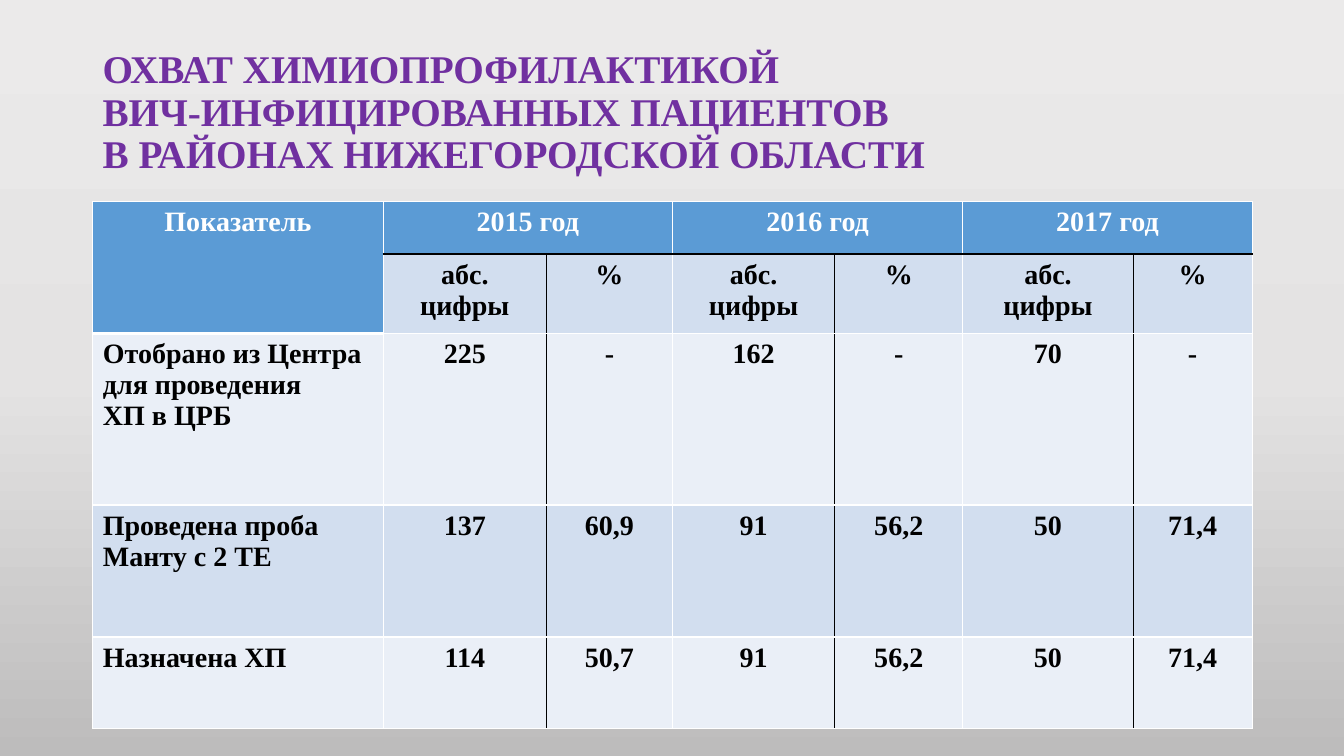
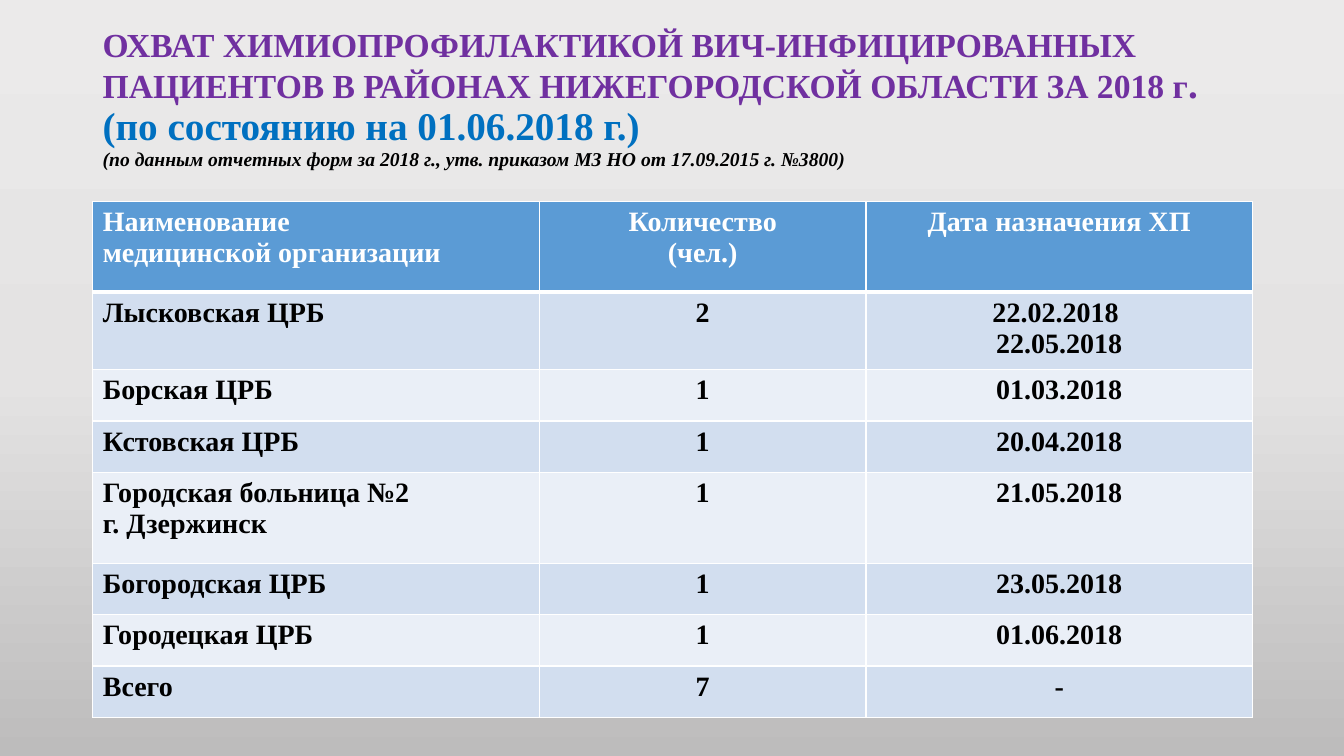
from lxml.etree import SubElement
from pptx import Presentation
from pptx.dml.color import RGBColor
from pptx.enum.text import MSO_ANCHOR, PP_ALIGN
from pptx.oxml.ns import qn
from pptx.util import Inches, Pt

# Shared look
FONT = "Times New Roman"
PURPLE, BLUE, BLACK, WHITE = "7030A0", "0070C0", "000000", "FFFFFF"
HEADER_FILL, DARK_BAND, LIGHT_BAND = "5B9BD5", "D2DEEF", "EAEFF7"
BACKGROUND_STOPS = [(0, "EBEAEA"), (50, "E4E3E3"), (100, "BDBCBC")]
LEFT, WIDTH = 0.92, 11.5
TABLE_TOP, TITLE_BOTTOM = 2, 1.85
TABLE_SIZE = 20


def rgb(color):
    return RGBColor.from_string(color)


def add_run(paragraph, text, size, color, italic=False):
    run = paragraph.add_run()
    run.text = text
    font = run.font
    font.name, font.size, font.bold, font.italic = FONT, Pt(size), True, italic
    font.color.rgb = rgb(color)


def set_background(master):
    """Vertical gradient inherited by every slide."""
    fill = master.background.fill
    fill.gradient()
    fill.gradient_angle = 270
    stop_list = next(master.element.iter(qn("a:gsLst")))
    for stop in list(stop_list):
        stop_list.remove(stop)
    for position, color in BACKGROUND_STOPS:
        stop = SubElement(stop_list, qn("a:gs"), pos=str(position * 1000))
        SubElement(stop, qn("a:srgbClr"), val=color)


def add_title(slide, top, lines):
    """Each line is a list of (text, size, color[, italic]) runs."""
    box = slide.shapes.add_textbox(Inches(LEFT), Inches(top), Inches(WIDTH),
                                   Inches(TITLE_BOTTOM - top))
    frame = box.text_frame
    frame.word_wrap = True
    frame.vertical_anchor = MSO_ANCHOR.MIDDLE
    paragraph = frame.paragraphs[0]
    paragraph.line_spacing = 0.9
    for index, line in enumerate(lines):
        if index:
            paragraph.add_line_break()
        for run in line:
            add_run(paragraph, *run)


def set_borders(cell, special):
    """White 1 pt borders, except the sides given in special."""
    properties = cell._tc.get_or_add_tcPr()
    for side in "LRTB":
        color, width = special.get(side, (WHITE, 1))
        line = SubElement(properties, qn(f"a:ln{side}"), w=str(Pt(width)))
        fill = SubElement(line, qn("a:solidFill"))
        SubElement(fill, qn("a:srgbClr"), val=color)


def fill_cell(cell, text, color, text_color, alignment):
    cell.fill.solid()
    cell.fill.fore_color.rgb = rgb(color)
    if not text:
        return
    frame = cell.text_frame
    for index, line in enumerate(text.split("\n")):
        paragraph = frame.add_paragraph() if index else frame.paragraphs[0]
        paragraph.alignment = alignment
        add_run(paragraph, line, TABLE_SIZE, text_color)


def add_table(slide, widths, heights, rows, special_borders, is_header):
    frame = slide.shapes.add_table(len(rows), len(widths), Inches(LEFT), Inches(TABLE_TOP),
                                   Inches(WIDTH), Inches(sum(heights)))
    table = frame.table
    table.horz_banding = False
    for column, width in zip(table.columns, widths):
        column.width = Inches(width)
    for row, height in zip(table.rows, heights):
        row.height = Inches(height)
    for r, texts in enumerate(rows):
        for c, text in enumerate(texts):
            cell = table.cell(r, c)
            header = is_header(r, c)
            band = DARK_BAND if r % 2 else LIGHT_BAND
            set_borders(cell, special_borders(r, c))
            fill_cell(cell, text, HEADER_FILL if header else band,
                      WHITE if header else BLACK,
                      PP_ALIGN.CENTER if c else PP_ALIGN.LEFT)
    return table


# Slide 1: coverage by year
def yearly_borders(r, c):
    if c == 0:
        return {"B": (WHITE, 3)} if r < 2 else {}
    if r == 0:
        return {"B": (BLACK, 1)}
    special = {"R" if c % 2 else "L": (BLACK, 1)}
    if r == 1:
        special["T"] = (BLACK, 1)
    return special


def add_yearly_slide(slide):
    add_title(slide, 0.4, [[(text, 28, PURPLE)] for text in (
        "ОХВАТ ХИМИОПРОФИЛАКТИКОЙ",
        "ВИЧ-ИНФИЦИРОВАННЫХ ПАЦИЕНТОВ",
        "В РАЙОНАХ НИЖЕГОРОДСКОЙ ОБЛАСТИ")])
    rows = [
        ["Показатель", "2015 год", "", "2016 год", "", "2017 год", ""],
        [""] + ["абс.\nцифры", "%"] * 3,
        ["Отобрано из Центра для проведения\nХП в ЦРБ", "225", "-", "162", "-", "70", "-"],
        ["Проведена проба Манту с 2 ТЕ", "137", "60,9", "91", "56,2", "50", "71,4"],
        ["Назначена ХП", "114", "50,7", "91", "56,2", "50", "71,4"],
    ]
    table = add_table(slide, [2.88, 1.62, 1.25, 1.61, 1.27, 1.69, 1.18],
                      [0.52, 0.79, 1.7, 1.31, 0.91], rows, yearly_borders,
                      lambda r, c: r == 0 or (r == 1 and c == 0))
    corner = table.cell(0, 0)
    corner.merge(table.cell(1, 0))
    corner.text_frame.paragraphs[0].alignment = PP_ALIGN.CENTER
    for c in (1, 3, 5):
        table.cell(0, c).merge(table.cell(0, c + 1))


# Slide 2: hospitals in 2018
def add_hospital_slide(slide):
    add_title(slide, 0.12, [
        [("ОХВАТ ХИМИОПРОФИЛАКТИКОЙ ВИЧ-ИНФИЦИРОВАННЫХ ПАЦИЕНТОВ "
          "В РАЙОНАХ НИЖЕГОРОДСКОЙ ОБЛАСТИ ЗА 2018 г", 24, PURPLE), (".", 28, PURPLE)],
        [("(по состоянию на 01.06.2018 г.)", 28, BLUE)],
        [("(по данным отчетных форм за 2018 г., утв. приказом МЗ НО "
          "от 17.09.2015 г. №3800)", 14, BLACK, True)],
    ])
    rows = [
        ["Наименование\nмедицинской организации", "Количество\n(чел.)", "Дата назначения ХП"],
        ["Лысковская ЦРБ", "2", "22.02.2018 \n22.05.2018"],
        ["Борская ЦРБ", "1", "01.03.2018"],
        ["Кстовская ЦРБ", "1", "20.04.2018"],
        ["Городская больница №2\nг. Дзержинск", "1", "21.05.2018"],
        ["Богородская ЦРБ", "1", "23.05.2018"],
        ["Городецкая ЦРБ", "1", "01.06.2018"],
        ["Всего", "7", "-"],
    ]
    add_table(slide, [4.43, 3.24, 3.83], [0.9, 0.76, 0.51, 0.51, 0.9, 0.51, 0.51, 0.51], rows,
              lambda r, c: {"B": (WHITE, 3)} if r == 0 else {},
              lambda r, c: r == 0)


def main():
    presentation = Presentation()
    presentation.slide_width, presentation.slide_height = Inches(13.33), Inches(7.5)
    set_background(presentation.slide_master)
    blank = presentation.slide_layouts[6]
    for build in (add_yearly_slide, add_hospital_slide):
        build(presentation.slides.add_slide(blank))
    presentation.save("out.pptx")


if __name__ == "__main__":
    main()
